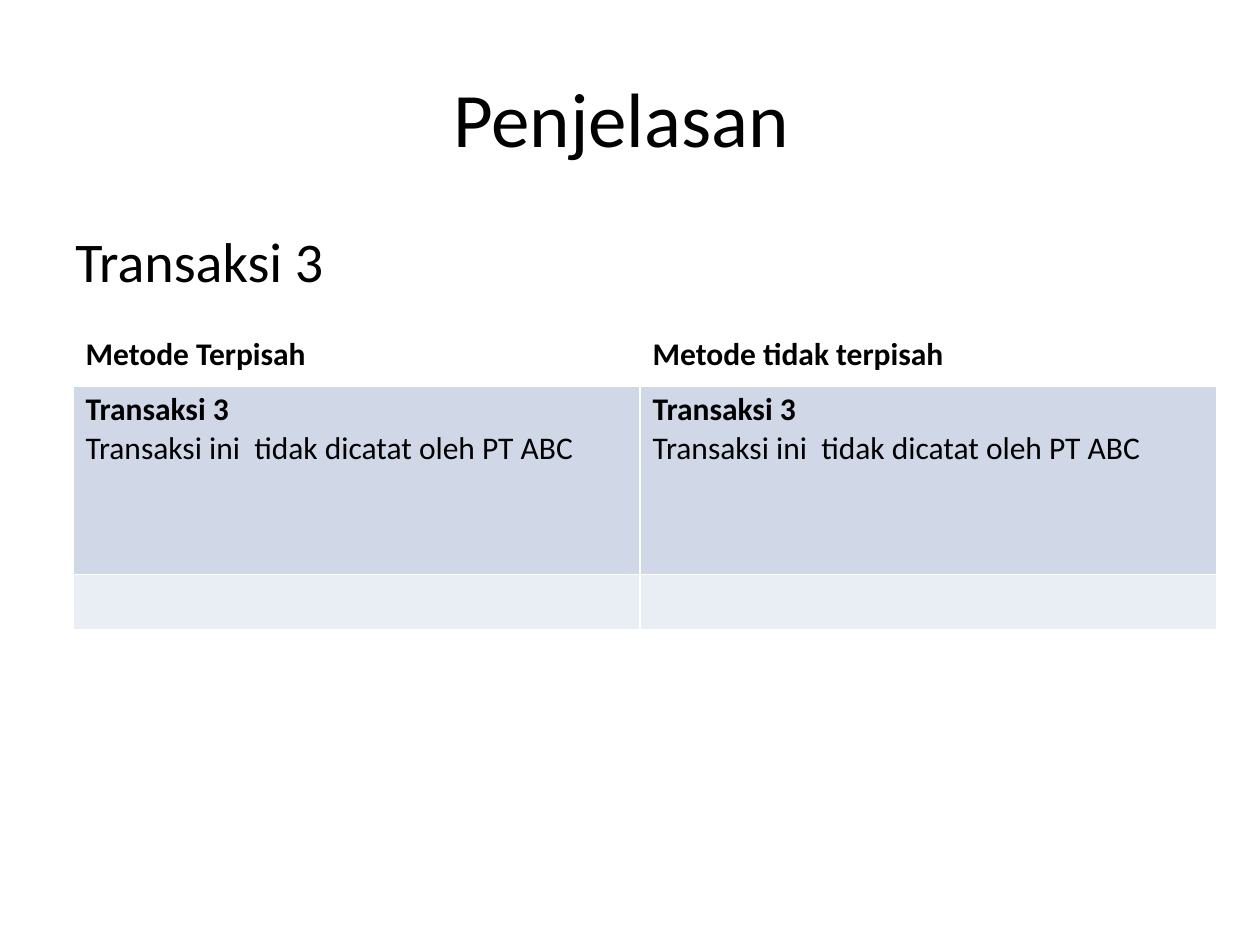
"""Build the explanation slide comparing two recording methods."""
from lxml.etree import SubElement
from pptx import Presentation
from pptx.dml.color import RGBColor
from pptx.enum.text import MSO_ANCHOR as Anchor, PP_ALIGN as Align
from pptx.oxml.ns import qn
from pptx.util import Inches, Pt

BLACK = RGBColor(0x00, 0x00, 0x00)
WHITE = RGBColor(0xFF, 0xFF, 0xFF)
BAND_DARK = RGBColor(0xD0, 0xD8, 0xE8)
BAND_LIGHT = RGBColor(0xE9, 0xED, 0xF4)
FONT = "Calibri"

COLUMN_WIDTHS = (4.5, 4.58)
ROW_HEIGHTS = (0.44, 1.51, 0.44)
ROW_FILLS = (None, BAND_DARK, BAND_LIGHT)
HEADINGS = ("Metode Terpisah", "Metode tidak terpisah")
ENTRY = (("Transaksi 3", True), ("Transaksi ini  tidak dicatat oleh PT ABC", False))


def add_span(para, text, size, bold=False):
    """Add one formatted run to a paragraph."""
    span = para.add_run()
    span.text = text
    span.font.name = FONT
    span.font.size = Pt(size)
    span.font.bold = bold
    span.font.color.rgb = BLACK


def add_text(page, area, text, size, align=Align.LEFT, anchor=Anchor.TOP, before=0):
    """Add a wrapping text box with one paragraph."""
    frame = page.shapes.add_textbox(*map(Inches, area)).text_frame
    frame.word_wrap = True
    frame.vertical_anchor = anchor
    para = frame.paragraphs[0]
    para.alignment = align
    para.space_before = Pt(before)
    add_span(para, text, size)


def set_borders(cell, bottom, top):
    """Draw white lines around a cell."""
    properties = cell._tc.get_or_add_tcPr()
    for position, (side, width) in enumerate((("L", 1), ("R", 1), ("T", top), ("B", bottom))):
        line = SubElement(properties, qn(f"a:ln{side}"), w=str(Pt(width)))
        fill = SubElement(line, qn("a:solidFill"))
        SubElement(fill, qn("a:srgbClr"), val=str(WHITE))
        properties.insert(position, line)


def fill_cell(cell, lines, color):
    """Set the text and background of a cell."""
    if color is None:
        cell.fill.background()
    else:
        cell.fill.solid()
        cell.fill.fore_color.rgb = color
    frame = cell.text_frame
    frame.paragraphs[0].font.size = Pt(18)
    for index, (text, bold) in enumerate(lines):
        para = frame.add_paragraph() if index else frame.paragraphs[0]
        add_span(para, text, 18, bold)


def add_methods_table(page):
    """Add the two-column table of methods."""
    size = (sum(COLUMN_WIDTHS), sum(ROW_HEIGHTS))
    table = page.shapes.add_table(
        len(ROW_HEIGHTS), len(COLUMN_WIDTHS), *map(Inches, (0.58, 2.61, *size))
    ).table
    for column, width in zip(table.columns, COLUMN_WIDTHS):
        column.width = Inches(width)
    contents = ([[(heading, True)] for heading in HEADINGS], [ENTRY, ENTRY], [(), ()])
    for index, (row, height) in enumerate(zip(table.rows, ROW_HEIGHTS)):
        row.height = Inches(height)
        for cell, lines in zip(row.cells, contents[index]):
            fill_cell(cell, lines, ROW_FILLS[index])
            set_borders(cell, bottom=3 if index == 0 else 1, top=3 if index == 1 else 1)


def main():
    """Create and save the deck."""
    deck = Presentation()
    deck.slide_width, deck.slide_height = Inches(10), Inches(7.5)
    page = deck.slides.add_slide(deck.slide_layouts[6])
    add_text(page, (0.5, 0.3, 9, 1.25), "Penjelasan ", 44, Align.CENTER, Anchor.MIDDLE)
    add_text(page, (0.5, 1.75, 9, 4.95), "Transaksi 3", 32, before=6.4)
    add_methods_table(page)
    deck.save("out.pptx")


if __name__ == "__main__":
    main()
